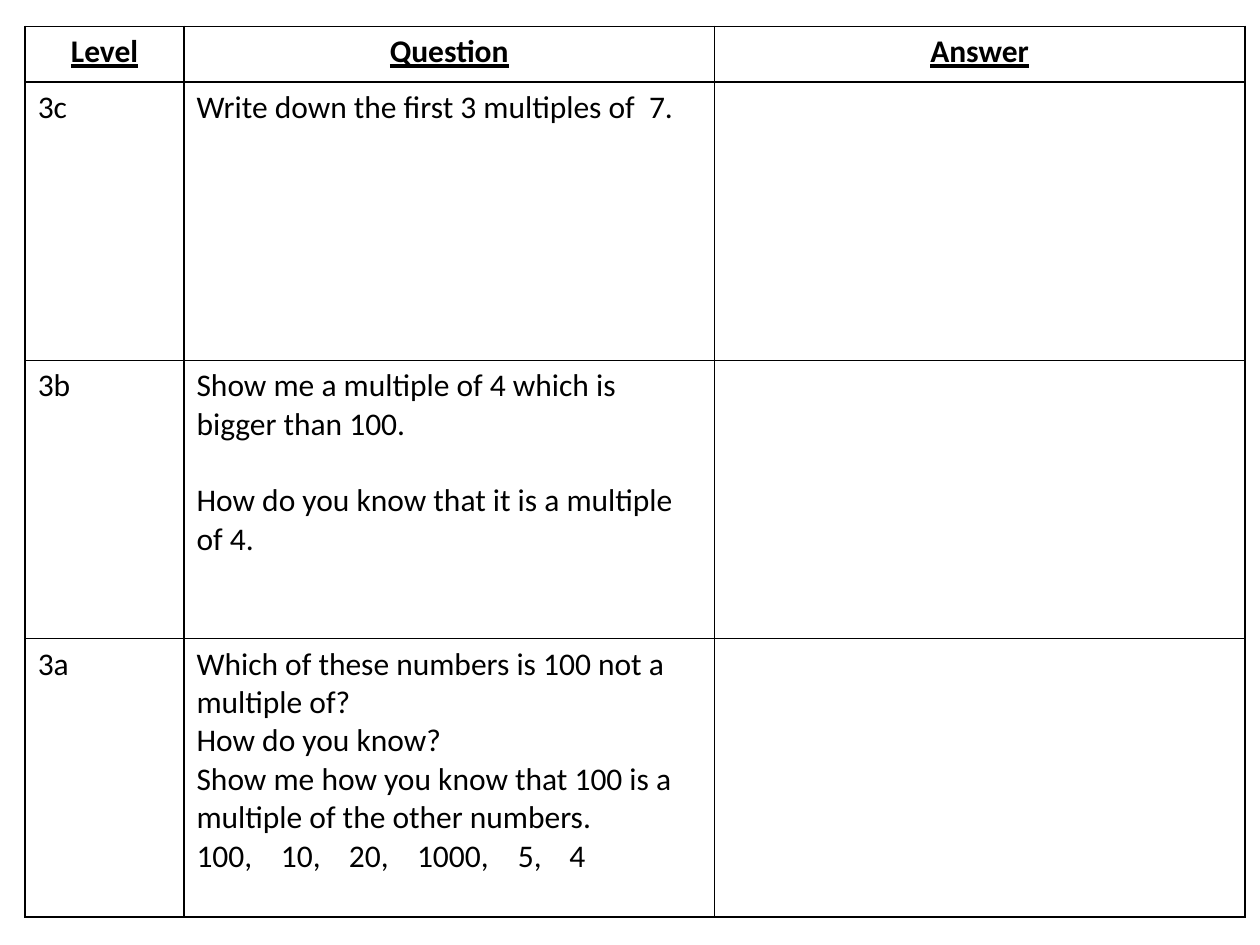
from lxml import etree
from pptx import Presentation
from pptx.dml.color import RGBColor
from pptx.enum import text
from pptx.oxml.ns import qn
from pptx.util import Inches, Pt

THEME = {"font": "Calibri", "size": Pt(18), "ink": "000000", "border": Pt(1)}

HEADERS = ["Level", "Question", "Answer"]
QUESTIONS = [
    ("3c", ["Write down the first 3 multiples of  7."]),
    ("3b", ["Show me a multiple of 4 which is bigger than 100.",
            "How do you know that it is a multiple of 4."]),
    ("3a", ["Which of these numbers is 100 not a multiple of?",
            "How do you know?",
            "Show me how you know that 100 is a multiple of the other numbers.",
            "100,\t10,\t20,\t1000,\t5,\t4"]),
]
PARAGRAPH_GAPS = {"3b": Pt(22)}
NUMBER_TABS = [0.67, 1.21, 1.75, 2.55, 2.96]

LEFT, TOP = 0.2, 0.21
COLUMNS = [1.26, 4.21, 4.21]
ROWS = [0.44] + [2.21] * len(QUESTIONS)


def set_tabs(p, stops):
    tabs = etree.SubElement(p._p.get_or_add_pPr(), qn("a:tabLst"))
    for stop in stops:
        etree.SubElement(tabs, qn("a:tab"), pos=str(Inches(stop)), algn="l")


def write(cell, lines, heading=False, gap=Pt(0)):
    tf = cell.text_frame
    for i, line in enumerate(lines):
        p = tf.add_paragraph() if i else tf.paragraphs[0]
        p.alignment = text.PP_ALIGN.CENTER if heading else text.PP_ALIGN.LEFT
        if i and gap:
            p.space_before = gap
        if "\t" in line:
            set_tabs(p, NUMBER_TABS)
        r = p.add_run()
        r.text = line
        r.font.name, r.font.size = THEME["font"], THEME["size"]
        r.font.bold = r.font.underline = heading
        r.font.color.rgb = RGBColor.from_string(THEME["ink"])


def style_cell(cell):
    """Clear the fill and rule all four sides."""
    cell.fill.background()
    props = cell._tc.get_or_add_tcPr()
    for i, side in enumerate(("lnL", "lnR", "lnT", "lnB")):
        ln = etree.Element(qn(f"a:{side}"), w=str(THEME["border"]))
        fill = etree.SubElement(ln, qn("a:solidFill"))
        etree.SubElement(fill, qn("a:srgbClr"), val=THEME["ink"])
        props.insert(i, ln)


def main():
    prs = Presentation()
    prs.slide_width, prs.slide_height = Inches(10), Inches(7.5)
    s = prs.slides.add_slide(prs.slide_layouts[6])
    table = s.shapes.add_table(
        len(ROWS), len(COLUMNS), Inches(LEFT), Inches(TOP),
        Inches(sum(COLUMNS)), Inches(sum(ROWS))).table
    table.first_row = table.horz_banding = False
    for column, width in zip(table.columns, COLUMNS):
        column.width = Inches(width)
    for row, height in zip(table.rows, ROWS):
        row.height = Inches(height)
    for cell in table.iter_cells():
        style_cell(cell)

    for col, header in enumerate(HEADERS):
        write(table.cell(0, col), [header], heading=True)
    for row, (level, lines) in enumerate(QUESTIONS, start=1):
        write(table.cell(row, 0), [level])
        write(table.cell(row, 1), lines, gap=PARAGRAPH_GAPS.get(level, Pt(0)))
    prs.save("out.pptx")


if __name__ == "__main__":
    main()
